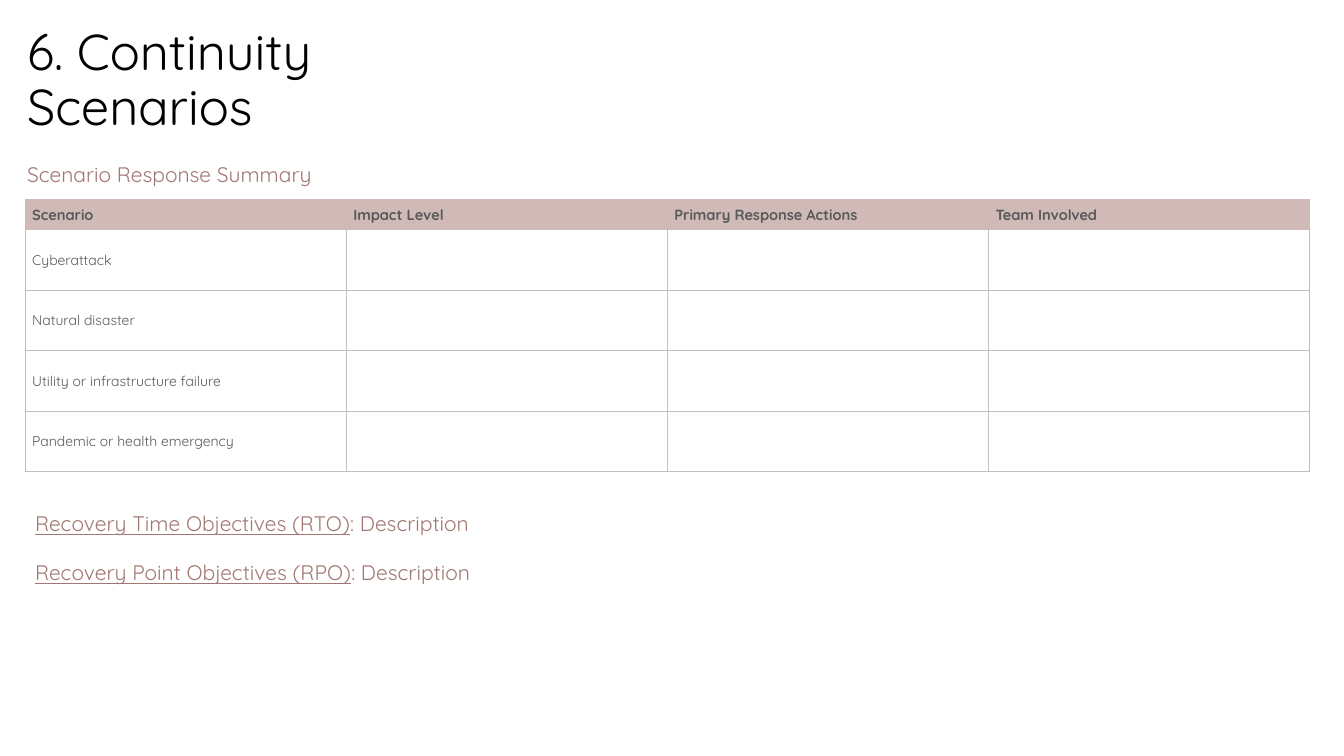
from lxml import etree
from pptx import Presentation
from pptx.dml.color import RGBColor
from pptx.enum.text import MSO_ANCHOR
from pptx.oxml.ns import qn
from pptx.util import Inches, Pt

MIDDLE, TOP = MSO_ANCHOR.MIDDLE, MSO_ANCHOR.TOP
BLACK = RGBColor(0x00, 0x00, 0x00)
ROSE = RGBColor(0xA1, 0x77, 0x73)
BLUSH = RGBColor(0xD0, 0xBA, 0xB8)
TEXT = RGBColor(0x59, 0x59, 0x59)
GRAY = RGBColor(0xBF, 0xBF, 0xBF)

prs = Presentation()
prs.slide_width, prs.slide_height = Inches(13.33), Inches(7.5)
slide = prs.slides.add_slide(prs.slide_layouts[6])


def style(run, size, color, bold=False):
    font = run.font
    font.name, font.size, font.bold = "Quicksand", Pt(size), bold
    font.color.rgb = color


def add_text(left, top, width, height, anchor=MIDDLE):
    box = slide.shapes.add_textbox(
        Inches(left), Inches(top), Inches(width), Inches(height))
    frame = box.text_frame
    frame.word_wrap, frame.vertical_anchor = True, anchor
    return frame


# Title
title = add_text(0.17, 0.15, 4.74, 1.32).paragraphs[0]
title.text = "6. Continuity Scenarios"
title.line_spacing, title.space_after = 0.9, Pt(6)
style(title.runs[0], 36, BLACK)

# Subtitle
summary = add_text(0.17, 1.55, 12.82, 0.35).paragraphs[0]
summary.text = "Scenario Response Summary"
style(summary.runs[0], 15, ROSE)

# Scenario table
rows = [
    ["Scenario", "Impact Level", "Primary Response Actions", "Team Involved"],
    ["Cyberattack", "", "", ""],
    ["Natural disaster", "", "", ""],
    ["Utility or infrastructure failure", "", "", ""],
    ["Pandemic or health emergency", "", "", ""],
]
frame = slide.shapes.add_table(
    len(rows), 4, Inches(0.25), Inches(1.98), Inches(12.74), Inches(2.7))
table = frame.table
table.first_row = table.horz_banding = False
for col in table.columns:
    col.width = Inches(12.74 / 4)

for r, row in enumerate(rows):
    head = r == 0
    table.rows[r].height = Inches(0.3 if head else 0.6)
    for c, text in enumerate(row):
        cell = table.cell(r, c)
        cell.vertical_anchor = MIDDLE
        cell.margin_left = cell.margin_right = Inches(0.07)
        cell.margin_top = cell.margin_bottom = 0
        para = cell.text_frame.paragraphs[0]
        para.text = text
        para.space_after = Pt(8)
        for run in para.runs:
            style(run, 10.5 if head else 10, TEXT, head)

        # Borders come before the fill in the cell properties
        props = cell._tc.get_or_add_tcPr()
        for side in ("a:lnL", "a:lnR", "a:lnT", "a:lnB"):
            pink = head or (r == 1 and side == "a:lnT")
            line = etree.SubElement(props, qn(side), w=str(Pt(1)))
            fill = etree.SubElement(line, qn("a:solidFill"))
            etree.SubElement(fill, qn("a:srgbClr"), val=str(BLUSH if pink else GRAY))
        if head:
            cell.fill.solid()
            cell.fill.fore_color.rgb = BLUSH
        else:
            cell.fill.background()

# Recovery objectives
goals = add_text(0.25, 5.02, 12.82, 1.16, TOP)
names = ["Recovery Time Objectives (RTO)", "Recovery Point Objectives (RPO)"]
for i, name in enumerate(names):
    para = goals.add_paragraph() if i else goals.paragraphs[0]
    para.space_before = Pt(17 if i else 0)
    for text, under in ((name, True), (": Description", False)):
        run = para.add_run()
        run.text = text
        style(run, 15, ROSE)
        run.font.underline = under

prs.save("out.pptx")
